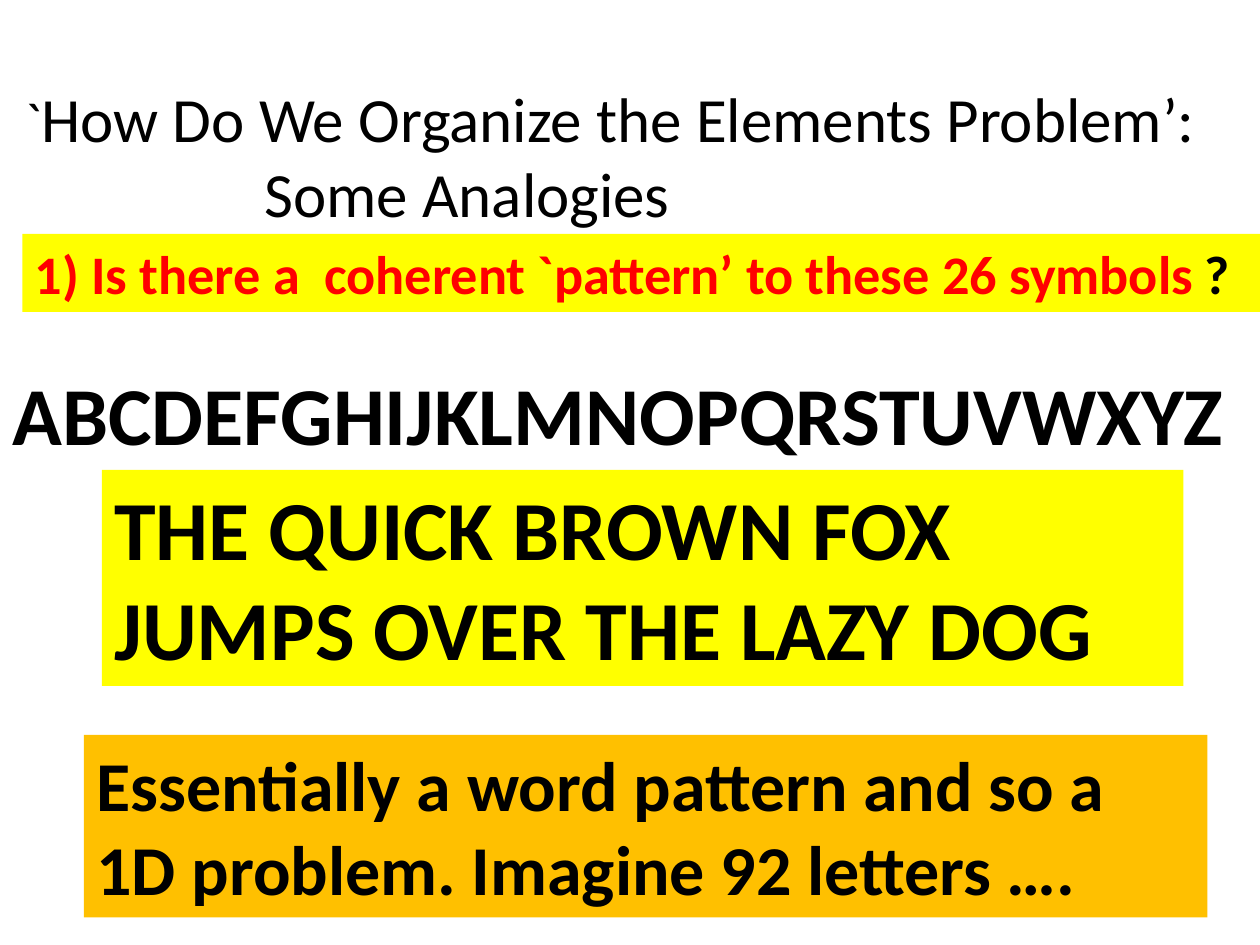
from dataclasses import dataclass

from pptx import Presentation
from pptx.dml.color import RGBColor
from pptx.enum.shapes import MSO_SHAPE
from pptx.enum.text import MSO_ANCHOR, PP_ALIGN
from pptx.util import Pt


@dataclass(frozen=True)
class Theme:
    font: str = "Calibri"
    ink: RGBColor = RGBColor(0, 0, 0)
    accent: RGBColor = RGBColor(255, 0, 0)
    yellow: RGBColor = RGBColor(255, 255, 0)
    orange: RGBColor = RGBColor(255, 192, 0)
    quote: int = 32
    title: int = 36
    question: int = 31
    alphabet: int = 47
    pangram: int = 48
    conclusion: int = 40


theme = Theme()


def add_span(para, text, size, color=theme.ink, bold=True):
    span = para.add_run()
    span.text = text
    span.font.name = theme.font
    span.font.size = Pt(size)
    span.font.bold = bold
    span.font.color.rgb = color


def add_box(left, top, width, height, fill=None):
    """Add a wrapping text box, or a filled rectangle; return its first paragraph."""
    place = Pt(left), Pt(top), Pt(width), Pt(height)
    if fill is None:
        box = slide.shapes.add_textbox(*place)
    else:
        box = slide.shapes.add_shape(MSO_SHAPE.RECTANGLE, *place)
        box.shadow.inherit = False
        box.fill.solid()
        box.fill.fore_color.rgb = fill
        box.line.fill.background()
    box.text_frame.word_wrap = True
    box.text_frame.vertical_anchor = MSO_ANCHOR.TOP
    para = box.text_frame.paragraphs[0]
    para.alignment = PP_ALIGN.LEFT
    return para, box.text_frame


deck = Presentation()
deck.slide_width, deck.slide_height = Pt(720), Pt(540)
slide = deck.slides.add_slide(deck.slide_layouts[6])

# Title, with its second line indented
para, frame = add_box(0, 41.8, 708, 94.5)
add_span(para, " `", theme.quote, bold=False)
add_span(para, "How Do We Organize the Elements Problem’:", theme.title, bold=False)
subtitle = frame.add_paragraph()
subtitle.alignment = PP_ALIGN.LEFT
subtitle._p.get_or_add_pPr().set("marL", str(Pt(144)))
add_span(subtitle, "Some Analogies", theme.title, bold=False)

# Statements
statements = [
    ("ABCDEFGHIJKLMNOPQRSTUVWXYZ", theme.alphabet, (0, 203.8, 720, 64), None),
    ("THE QUICK BROWN FOX JUMPS OVER THE LAZY DOG", theme.pangram,
     (58.3, 268.5, 618, 123.5), theme.yellow),
    ("Essentially a word pattern and so a 1D problem. Imagine 92 letters ….",
     theme.conclusion, (48, 420, 642, 104.2), theme.orange),
]
for text, size, place, fill in statements:
    para, frame = add_box(*place, fill)
    add_span(para, text, size)

# Question
para, frame = add_box(12.8, 133.7, 708, 44.6, theme.yellow)
add_span(para, "1) Is there a  coherent `pattern’ to these 26 symbols ",
         theme.question, theme.accent)
add_span(para, "?", theme.question)

deck.save("out.pptx")
